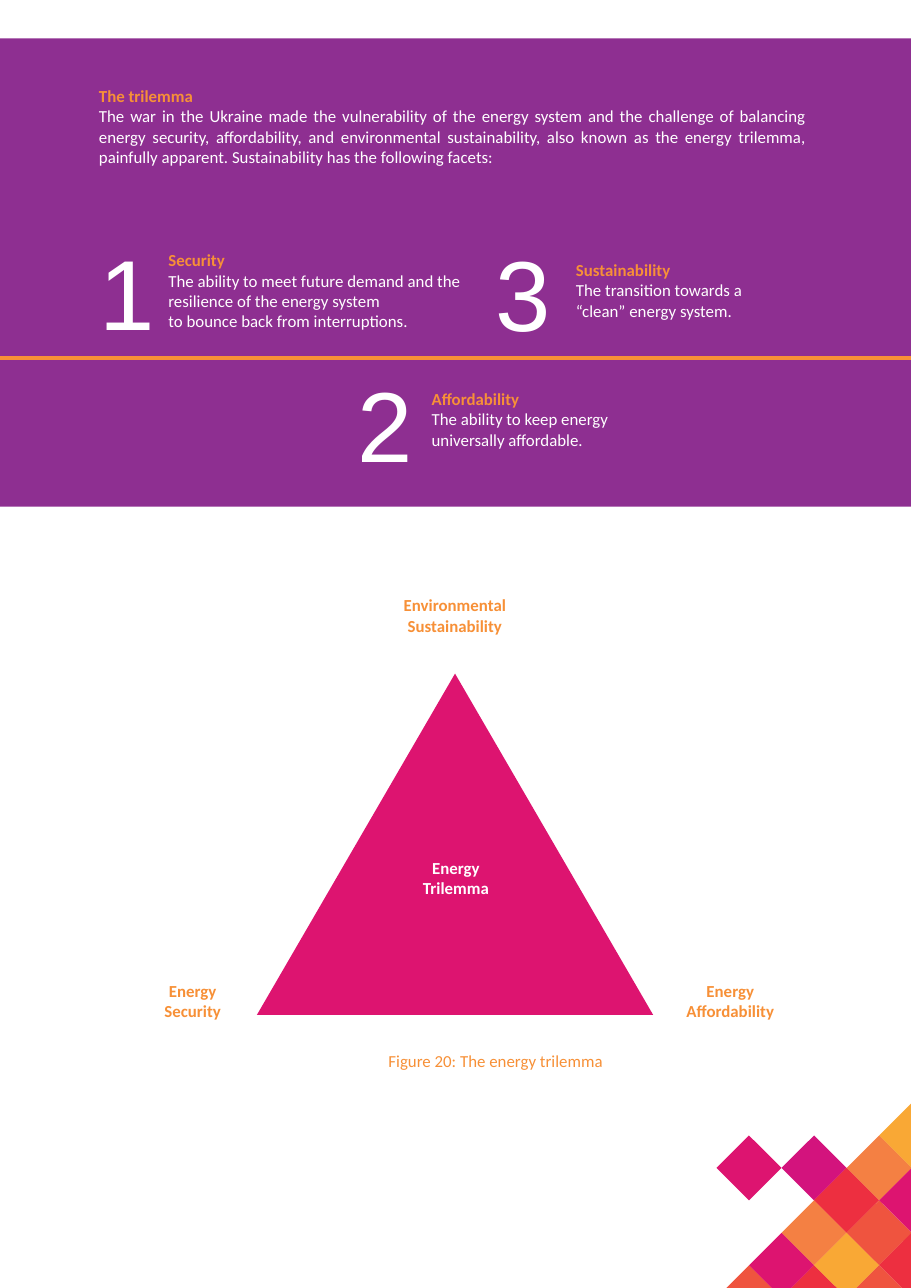
from dataclasses import dataclass

import pptx
import pptx.dml.color
import pptx.enum.shapes
import pptx.enum.text
import pptx.util
from lxml import etree

ALIGN = pptx.enum.text.PP_ALIGN
ANCHOR = pptx.enum.text.MSO_ANCHOR
SHAPE = pptx.enum.shapes.MSO_SHAPE

PURPLE, ORANGE, PINK, WHITE = "8E2F91", "F79037", "DD1470", "FFFFFF"
MAGENTA, RED, CORAL, APRICOT, AMBER = "D3137D", "ED2F40", "EF543F", "F48043", "F9A835"

# The page is a grid of 100 columns by 100 rows
GRID = 100
deck = pptx.Presentation()
deck.slide_width = pptx.util.Inches(8.27)
deck.slide_height = pptx.util.Inches(11.69)
page = deck.slides.add_slide(deck.slide_layouts[6])


@dataclass
class Area:
    column: float
    row: float
    columns: float
    rows: float


@dataclass
class Line:
    text: str
    color: str = WHITE
    bold: bool = False
    size: float = 11
    font: str = "Calibri"


@dataclass
class Block:
    area: Area
    lines: list[Line]
    align: ALIGN = ALIGN.LEFT
    anchor: ANCHOR = ANCHOR.TOP


@dataclass
class Tile:
    column: int
    row: int
    color: str


def across(columns: float) -> int:
    return round(deck.slide_width * columns / GRID)


def down(rows: float) -> int:
    return round(deck.slide_height * rows / GRID)


def place(area: Area) -> tuple[int, int, int, int]:
    return across(area.column), down(area.row), across(area.columns), down(area.rows)


def rgb(color: str) -> pptx.dml.color.RGBColor:
    return pptx.dml.color.RGBColor.from_string(color)


def paint(shape, color: str) -> None:
    shape.shadow.inherit = False
    shape.fill.solid()
    shape.fill.fore_color.rgb = rgb(color)
    shape.line.fill.background()


def draw_shape(kind: SHAPE, area: Area, color: str) -> None:
    paint(page.shapes.add_shape(kind, *place(area)), color)


def draw_rule(row: float, color: str, weight: float) -> None:
    rule = page.shapes.add_connector(
        pptx.enum.shapes.MSO_CONNECTOR.STRAIGHT, 0, down(row), across(GRID), down(row))
    rule.line.color.rgb = rgb(color)
    rule.line.width = pptx.util.Pt(weight)
    etree.SubElement(rule._element.spPr, pptx.oxml.ns.qn("a:effectLst"))


def draw_block(block: Block) -> None:
    box = page.shapes.add_textbox(*place(block.area))
    frame = box.text_frame
    frame.word_wrap = True
    frame.vertical_anchor = block.anchor
    for index, line in enumerate(block.lines):
        para = frame.add_paragraph() if index else frame.paragraphs[0]
        para.text = line.text
        para.alignment = block.align
        para.font.name = line.font
        para.font.size = pptx.util.Pt(line.size)
        para.font.bold = line.bold
        para.font.color.rgb = rgb(line.color)


def clip(points: list[tuple[float, float]], axis: int) -> list[tuple[float, float]]:
    """Cut a polygon at the right (axis 0) or bottom (axis 1) page edge."""
    kept = []
    for start, end in zip(points, points[1:] + points[:1]):
        if start[axis] <= GRID:
            kept.append(start)
        if (start[axis] <= GRID) != (end[axis] <= GRID):
            share = (GRID - start[axis]) / (end[axis] - start[axis])
            kept.append((start[0] + share * (end[0] - start[0]),
                         start[1] + share * (end[1] - start[1])))
    return kept


def draw_tile(tile: Tile) -> None:
    half_width, half_height = 3.57, 2.52
    x = 82.22 + tile.column * half_width
    y = 90.68 + tile.row * half_height
    diamond = [(x, y - half_height), (x + half_width, y),
               (x, y + half_height), (x - half_width, y)]
    corners = [(across(a), down(b)) for a, b in clip(clip(diamond, 0), 1)]
    outline = page.shapes.build_freeform(*corners[0])
    outline.add_line_segments(corners[1:], close=True)
    paint(outline.convert_to_shape(), tile.color)


def heading(text: str) -> Line:
    return Line(text, ORANGE, bold=True)


def numeral(digit: str, column: float, row: float) -> Block:
    return Block(Area(column, row, 8.71, 10.18), [Line(digit, size=65, font="Arial")])


def label(area: Area, *lines: Line) -> Block:
    return Block(area, list(lines), ALIGN.CENTER, ANCHOR.MIDDLE)


# Purple band, orange rule and triangle
draw_shape(SHAPE.RECTANGLE, Area(0, 2.99, GRID, 36.36), PURPLE)
draw_shape(SHAPE.ISOSCELES_TRIANGLE, Area(28.2, 52.3, 43.5, 26.5), PINK)
draw_rule(27.8, ORANGE, 3)

# Texts
BLOCKS = [
    Block(Area(9.67, 6.24, 80.05, 4.53), [
        heading("The trilemma"),
        Line("The war in the Ukraine made the vulnerability of the energy system and the "
             "challenge of balancing energy security, affordability, and environmental "
             "sustainability, also known as the energy trilemma, painfully apparent. "
             "Sustainability has the following facets:")], ALIGN.JUSTIFY),
    numeral("1", 9.79, 17.54),
    Block(Area(17.29, 18.99, 41.35, 5.9), [
        heading("Security"),
        Line("The ability to meet future demand and the resilience of the energy system"),
        Line("to bounce back from interruptions.")]),
    numeral("2", 38.09, 27.8),
    Block(Area(46.19, 29.77, 28.66, 5.9), [
        heading("Affordability"),
        Line("The ability to keep energy universally affordable.")]),
    numeral("3", 53.2, 17.62),
    Block(Area(62.03, 19.76, 22.73, 5.9), [
        heading("Sustainability"),
        Line("The transition towards a “clean” energy system.")]),
    label(Area(42.2, 44.31, 15.48, 6.93),
          heading("Environmental"), heading("Sustainability")),
    label(Area(43.29, 64.67, 13.54, 6.93), Line("Energy Trilemma", bold=True)),
    label(Area(14.39, 74.25, 13.54, 6.93), heading("Energy Security")),
    label(Area(73.4, 74.25, 13.54, 6.93), heading("Energy Affordability")),
    Block(Area(14.51, 81.18, 79.81, 2.4),
          [Line("Figure 20: The energy trilemma", ORANGE)], ALIGN.CENTER),
]
for block in BLOCKS:
    draw_block(block)

# Corner mosaic, in steps of half a tile
TILES = [
    Tile(5, -1, AMBER),
    Tile(0, 0, PINK), Tile(2, 0, MAGENTA), Tile(4, 0, APRICOT),
    Tile(3, 1, RED), Tile(5, 1, PINK),
    Tile(2, 2, APRICOT), Tile(4, 2, CORAL),
    Tile(1, 3, PINK), Tile(3, 3, AMBER), Tile(5, 3, RED),
    Tile(0, 4, CORAL), Tile(2, 4, RED), Tile(4, 4, CORAL),
]
for tile in TILES:
    draw_tile(tile)

deck.save("out.pptx")
